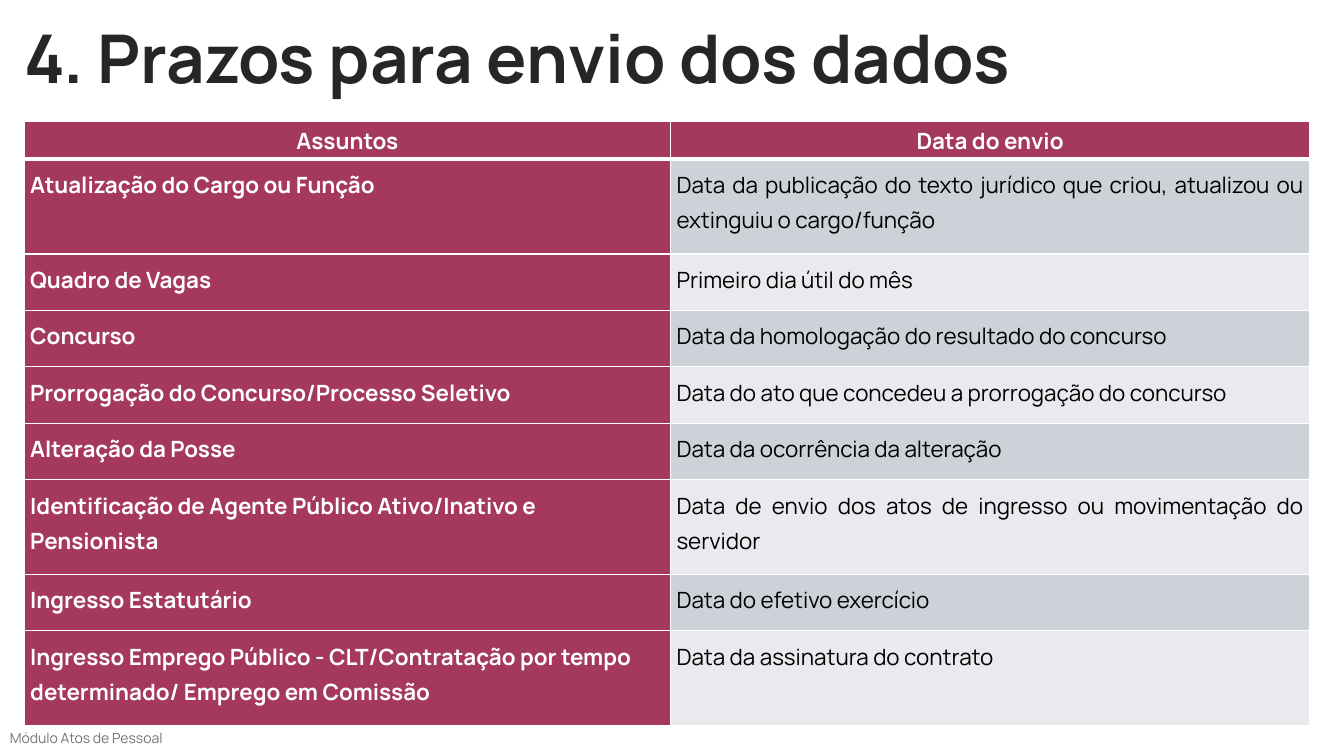
from lxml import etree
from pptx import Presentation
from pptx.dml.color import RGBColor
from pptx.enum.text import MSO_ANCHOR, MSO_AUTO_SIZE, PP_ALIGN
from pptx.oxml.ns import qn
from pptx.util import Inches, Pt

FONT = "Manrope"
WINE = RGBColor(0xA5, 0x39, 0x5D)
BAND_DARK = RGBColor(0xCC, 0xD2, 0xD8)
BAND_LIGHT = RGBColor(0xE8, 0xEA, 0xED)
WHITE = RGBColor(0xFF, 0xFF, 0xFF)
BLACK = RGBColor(0x00, 0x00, 0x00)
INK = RGBColor(0x26, 0x26, 0x26)
GRAY = RGBColor(0x74, 0x74, 0x74)

HEADER = ("Assuntos", "Data do envio")
DEADLINES = [
    ("Atualização do Cargo ou Função",
     "Data da publicação do texto jurídico que criou, atualizou ou extinguiu o cargo/função"),
    ("Quadro de Vagas", "Primeiro dia útil do mês"),
    ("Concurso", "Data da homologação do resultado do concurso"),
    ("Prorrogação do Concurso/Processo Seletivo",
     "Data do ato que concedeu a prorrogação do concurso"),
    ("Alteração da Posse", "Data da ocorrência da alteração"),
    ("Identificação de Agente Público Ativo/Inativo e Pensionista",
     "Data de envio dos atos de ingresso ou movimentação do servidor"),
    ("Ingresso Estatutário", "Data do efetivo exercício"),
    ("Ingresso Emprego Público - CLT/Contratação por tempo determinado/ Emprego em Comissão",
     "Data da assinatura do contrato"),
]
COL_WIDTHS = (6.41, 6.34)
HEADER_HEIGHT, ONE_LINE, TWO_LINES = 0.38, 0.56, 0.94
WRAP_LENGTH = 55  # characters that fit on one line of a cell


def add_run(p, text, size, color, bold=False):
    r = p.add_run()
    r.text = text
    r.font.name = FONT
    r.font.size = Pt(size)
    r.font.bold = bold
    r.font.color.rgb = color


def set_margins(item, inset):
    item.margin_left = item.margin_right = Inches(inset)
    item.margin_top = item.margin_bottom = Inches(inset)


def set_borders(cell, top=1, bottom=1):
    tcPr = cell._tc.get_or_add_tcPr()
    for side, width in (("L", 1), ("R", 1), ("T", top), ("B", bottom)):
        ln = etree.SubElement(tcPr, qn(f"a:ln{side}"), w=str(Pt(width)))
        fill = etree.SubElement(ln, qn("a:solidFill"))
        etree.SubElement(fill, qn("a:srgbClr"), val=str(WHITE))


def fill_cell(cell, text, fill, color, bold, align, inset, top=1, bottom=1):
    set_borders(cell, top, bottom)
    cell.fill.solid()
    cell.fill.fore_color.rgb = fill
    set_margins(cell, inset)
    p = cell.text_frame.paragraphs[0]
    p.alignment = align
    p.line_spacing = 1.15
    p.space_after = Pt(8)
    add_run(p, text, 16, color, bold)


def add_title(slide, left, top, width, height):
    sp = slide.shapes.title
    sp.left, sp.top = Inches(left), Inches(top)
    sp.width, sp.height = Inches(width), Inches(height)
    tf = sp.text_frame
    set_margins(tf, 0)
    tf.word_wrap = False
    tf.auto_size = MSO_AUTO_SIZE.NONE
    tf.vertical_anchor = MSO_ANCHOR.TOP
    p = tf.paragraphs[0]
    p.alignment = PP_ALIGN.LEFT
    p.line_spacing = Pt(46.2)
    p.space_before = Pt(0)
    add_run(p, "4. Prazos para envio dos dados", 48, INK, True)


def add_deadline_table(slide, left, top):
    heights = [HEADER_HEIGHT] + [
        TWO_LINES if max(map(len, row)) > WRAP_LENGTH else ONE_LINE for row in DEADLINES]
    table = slide.shapes.add_table(
        len(heights), len(COL_WIDTHS), Inches(left), Inches(top),
        Inches(sum(COL_WIDTHS)), Inches(sum(heights))).table
    for column, width in zip(table.columns, COL_WIDTHS):
        column.width = Inches(width)
    for row, height in zip(table.rows, heights):
        row.height = Inches(height)

    # Header row
    for c, text in enumerate(HEADER):
        fill_cell(table.cell(0, c), text, WINE, WHITE, True, PP_ALIGN.CENTER, 0, bottom=3)

    # Subject and date rows
    for i, (subject, date) in enumerate(DEADLINES, 1):
        edge = 3 if i == 1 else 1
        band = BAND_DARK if i % 2 else BAND_LIGHT
        fill_cell(table.cell(i, 0), subject, WINE, WHITE, True, PP_ALIGN.LEFT, 0.06, top=edge)
        fill_cell(table.cell(i, 1), date, band, BLACK, False, PP_ALIGN.JUSTIFY, 0.06, top=edge)


def add_footer(slide, left, top, width, height):
    sp = slide.shapes.add_textbox(Inches(left), Inches(top), Inches(width), Inches(height))
    tf = sp.text_frame
    tf.word_wrap = True
    p = tf.paragraphs[0]
    p.line_spacing = 0.9
    add_run(p, "Módulo Atos de Pessoal", 10, GRAY)


def main():
    prs = Presentation()
    prs.slide_width, prs.slide_height = Inches(13.33), Inches(7.5)
    slide = prs.slides.add_slide(prs.slide_layouts[5])
    add_footer(slide, 0, 7.21, 12.75, 0.22)
    add_title(slide, 0.24, 0.32, 9.85, 0.65)
    add_deadline_table(slide, 0.24, 1.2)
    prs.save("out.pptx")


if __name__ == "__main__":
    main()
